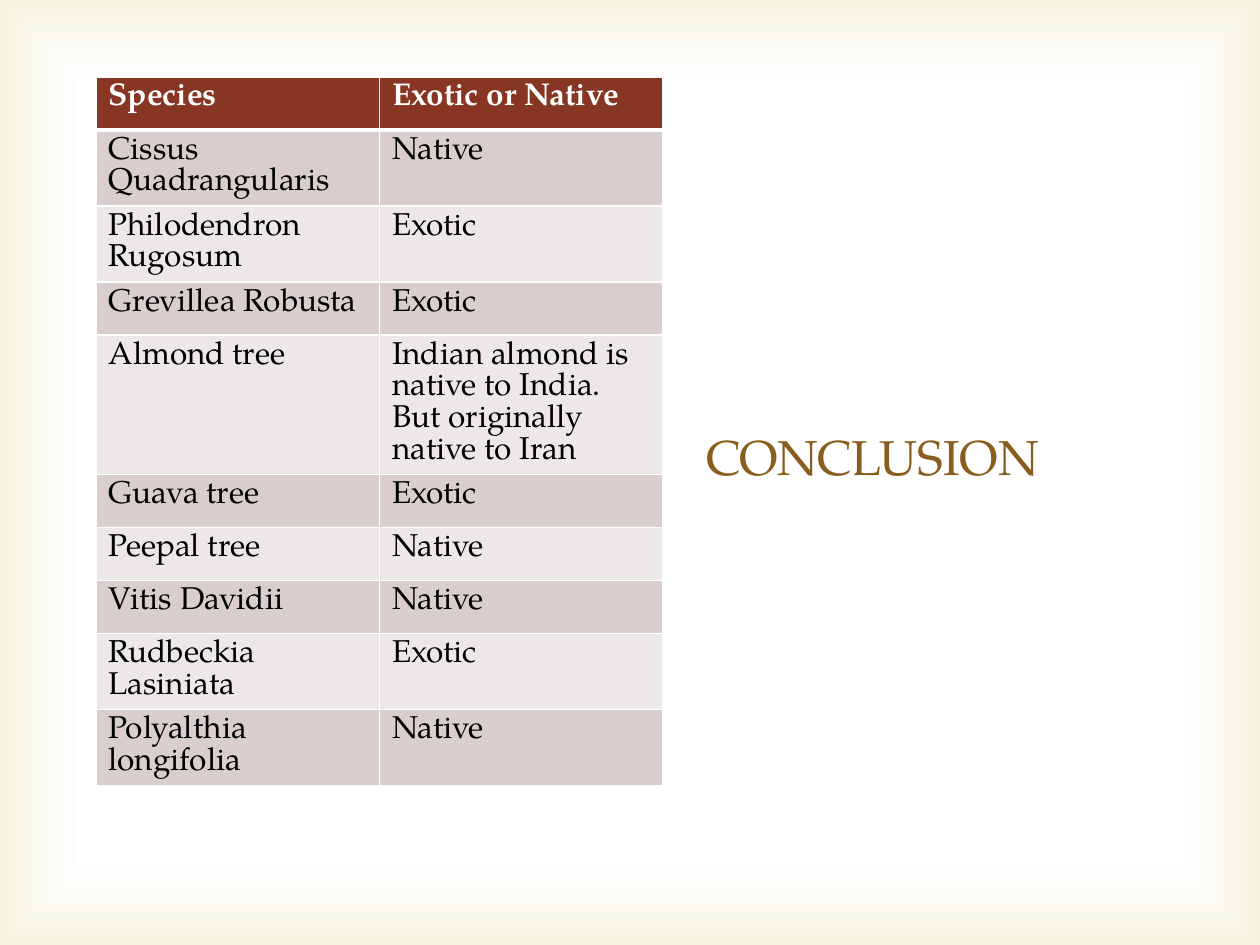
from dataclasses import dataclass
from lxml.etree import SubElement as Sub
from pptx import Presentation
from pptx.dml.color import RGBColor as Rgb
from pptx.enum.shapes import MSO_SHAPE as Shape
from pptx.enum.text import MSO_ANCHOR as Anchor, PP_ALIGN as Align
from pptx.oxml import parse_xml
from pptx.oxml.ns import nsdecls, qn
from pptx.util import Pt

HEAD = ("Species", "Exotic or Native")
PLANTS = [
    ("Cissus Quadrangularis", "Native"),
    ("Philodendron Rugosum", "Exotic"),
    ("Grevillea Robusta", "Exotic"),
    ("Almond tree", "Indian almond is native to India. But originally native to Iran"),
    ("Guava tree", "Exotic"),
    ("Peepal tree", "Native"),
    ("Vitis Davidii", "Native"),
    ("Rudbeckia Lasiniata", "Exotic"),
    ("Polyalthia longifolia", "Native"),
]
GLOW = [(83, "FFFFFF", 11), (100, "D1CA75", 23)]


@dataclass(frozen=True)
class Theme:
    font: str = "TeX Gyre Pagella"
    title: str = "895D1D"
    head: str = "873624"
    bands: tuple = ("D9CECD", "EDE8E8")
    white: str = "FFFFFF"
    ink: str = "000000"
    big: int = 28
    body: int = 18
    thin: int = 1
    thick: int = 3


T = Theme()


def px(n):
    return round(n * 914400 / 126)


def write(frame, text, size=T.body, color=T.ink, bold=False):
    para = frame.paragraphs[0]
    para.alignment = Align.LEFT
    run = para.add_run()
    run.text = text
    font = run.font
    font.name, font.size, font.bold = T.font, Pt(size), bold
    font.color.rgb = Rgb.from_string(color)


def edge(cell, low):
    props = cell._tc.get_or_add_tcPr()
    for i, side in enumerate(("lnL", "lnR", "lnT", "lnB")):
        wide = low if side == "lnB" else T.thin
        line = parse_xml(
            f'<a:{side} {nsdecls("a")} w="{Pt(wide)}"><a:solidFill>'
            f'<a:srgbClr val="{T.white}"/></a:solidFill></a:{side}>')
        props.insert(i, line)


def add_glow(slide, wide, high):
    glow = slide.shapes.add_shape(Shape.RECTANGLE, 0, 0, wide, high)
    glow.shadow.inherit = False
    glow.line.fill.background()
    grad = parse_xml(
        f'<a:gradFill {nsdecls("a")} rotWithShape="1"><a:gsLst/><a:path path="rect">'
        '<a:fillToRect l="50000" t="50000" r="50000" b="50000"/></a:path></a:gradFill>')
    for pos, color, alpha in GLOW:
        stop = Sub(grad[0], qn("a:gs"), pos=str(pos * 1000))
        tint = Sub(stop, qn("a:srgbClr"), val=color)
        Sub(tint, qn("a:alpha"), val=str(alpha * 1000))
    glow._element.spPr.find(qn("a:prstGeom")).addnext(grad)
    slide.shapes._spTree.insert(2, glow._element)


def add_title(slide):
    title = slide.shapes.title
    title.left, title.top, title.width, title.height = map(px, (694, 232, 471, 260))
    title.text_frame.vertical_anchor = Anchor.BOTTOM
    write(title.text_frame, "CONCLUSION", size=T.big, color=T.title)


def add_plants(slide):
    rows = [HEAD, *PLANTS]
    high = px(53)
    table = slide.shapes.add_table(
        len(rows), len(HEAD), px(96), px(77), px(567), high * len(rows)).table
    for r, row in enumerate(rows):
        table.rows[r].height = high
        top = r == 0
        for c, text in enumerate(row):
            cell = table.cell(r, c)
            cell.fill.solid()
            cell.fill.fore_color.rgb = Rgb.from_string(T.head if top else T.bands[(r - 1) % 2])
            edge(cell, T.thick if top else T.thin)
            write(cell.text_frame, text, color=T.white if top else T.ink, bold=top)


def main():
    deck = Presentation()
    deck.slide_width, deck.slide_height = px(1260), px(945)
    slide = deck.slides.add_slide(deck.slide_layouts[5])
    add_glow(slide, deck.slide_width, deck.slide_height)
    add_title(slide)
    add_plants(slide)
    deck.save("out.pptx")


if __name__ == "__main__":
    main()
